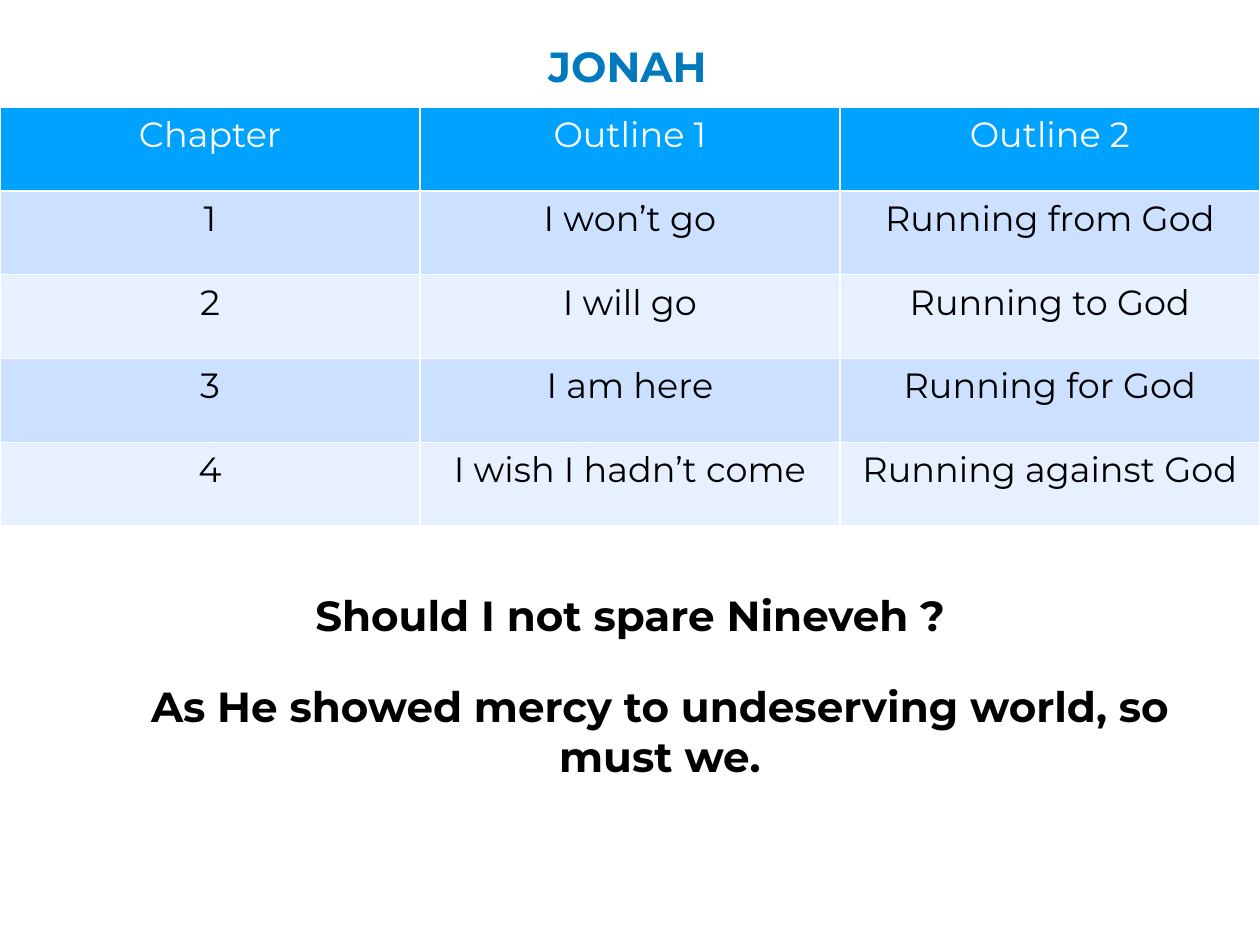
from dataclasses import dataclass

from lxml.etree import SubElement
from pptx import Presentation
from pptx.dml.color import RGBColor as Rgb
from pptx.enum.text import MSO_ANCHOR as Anchor, MSO_AUTO_SIZE as AutoSize, PP_ALIGN as Align
from pptx.oxml.ns import qn
from pptx.util import Cm, Pt


@dataclass(frozen=True)
class Theme:
    """Colours, font and type sizes of the slide."""
    font: str = "Montserrat"
    heading: str = "0079BF"
    ink: str = "000000"
    white: str = "FFFFFF"
    header: str = "00A2FF"
    bands: tuple = ("CCE0FF", "E7F0FF")
    large: int = 24
    body: int = 20
    inset: float = 0.15
    rule: int = 1


class SlideBuilder:
    """Places styled elements on the current slide."""

    def __init__(self, slide, theme):
        self.slide = slide
        self.theme = theme

    def format_text(self, frame, size, color, bold):
        for paragraph in frame.paragraphs:
            paragraph.alignment = Align.CENTER
            for run in paragraph.runs:
                run.font.name = self.theme.font
                run.font.size = Pt(size)
                run.font.bold = bold
                run.font.color.rgb = Rgb.from_string(color)

    def fill_box(self, box, words, color, anchor, wrap=True):
        frame = box.text_frame
        frame.text = words
        frame.auto_size = AutoSize.NONE
        frame.word_wrap = wrap
        frame.vertical_anchor = anchor
        frame.margin_left = frame.margin_right = Cm(self.theme.inset)
        frame.margin_top = frame.margin_bottom = Cm(self.theme.inset)
        self.format_text(frame, self.theme.large, color, True)

    def title(self, words, left, top, width, height):
        heading = self.slide.shapes.title
        heading.left, heading.top = Cm(left), Cm(top)
        heading.width, heading.height = Cm(width), Cm(height)
        self.fill_box(heading, words, self.theme.heading, Anchor.TOP, wrap=False)

    def statement(self, words, left, top, width, height, anchor=Anchor.MIDDLE):
        box = self.slide.shapes.add_textbox(Cm(left), Cm(top), Cm(width), Cm(height))
        self.fill_box(box, words, self.theme.ink, anchor)

    def border(self, cell):
        properties = cell._tc.get_or_add_tcPr()
        for side in ("a:lnL", "a:lnR", "a:lnT", "a:lnB"):
            line = SubElement(properties, qn(side), w=str(Pt(self.theme.rule)))
            SubElement(SubElement(line, qn("a:solidFill")), qn("a:srgbClr"), val=self.theme.white)

    def table(self, rows, left, top, width, row_height):
        theme = self.theme
        grid = self.slide.shapes.add_table(
            len(rows), len(rows[0]), Cm(left), Cm(top), Cm(width), Cm(row_height * len(rows))
        ).table
        for r, entries in enumerate(rows):
            fill = theme.bands[(r - 1) % 2] if r else theme.header
            color = theme.ink if r else theme.white
            for c, words in enumerate(entries):
                cell = grid.cell(r, c)
                cell.text_frame.text = words
                self.format_text(cell.text_frame, theme.body, color, False)
                self.border(cell)
                cell.fill.solid()
                cell.fill.fore_color.rgb = Rgb.from_string(fill)


OUTLINE = [
    ("Chapter", "Outline 1", "Outline 2"),
    ("1", "I won’t go", "Running from God"),
    ("2", "I will go", "Running to God"),
    ("3", "I am here", "Running for God"),
    ("4", "I wish I hadn’t come", "Running against God"),
]


def main():
    deck = Presentation()
    deck.slide_width, deck.slide_height = Cm(25.4), Cm(19.05)
    title_only = deck.slide_layouts[5]
    jonah = SlideBuilder(deck.slides.add_slide(title_only), Theme())
    jonah.title("JONAH", 10.82, 0.66, 3.66, 2.34)
    jonah.table(OUTLINE, 0, 2.16, 25.4, 1.69)
    jonah.statement("Should I not spare Nineveh ?", 5.11, 11.73, 15.19, 1.32)
    jonah.statement("As He showed mercy to undeserving world, so must we.",
                    2.84, 13.56, 20.93, 3.35, Anchor.TOP)
    deck.save("out.pptx")


if __name__ == "__main__":
    main()
